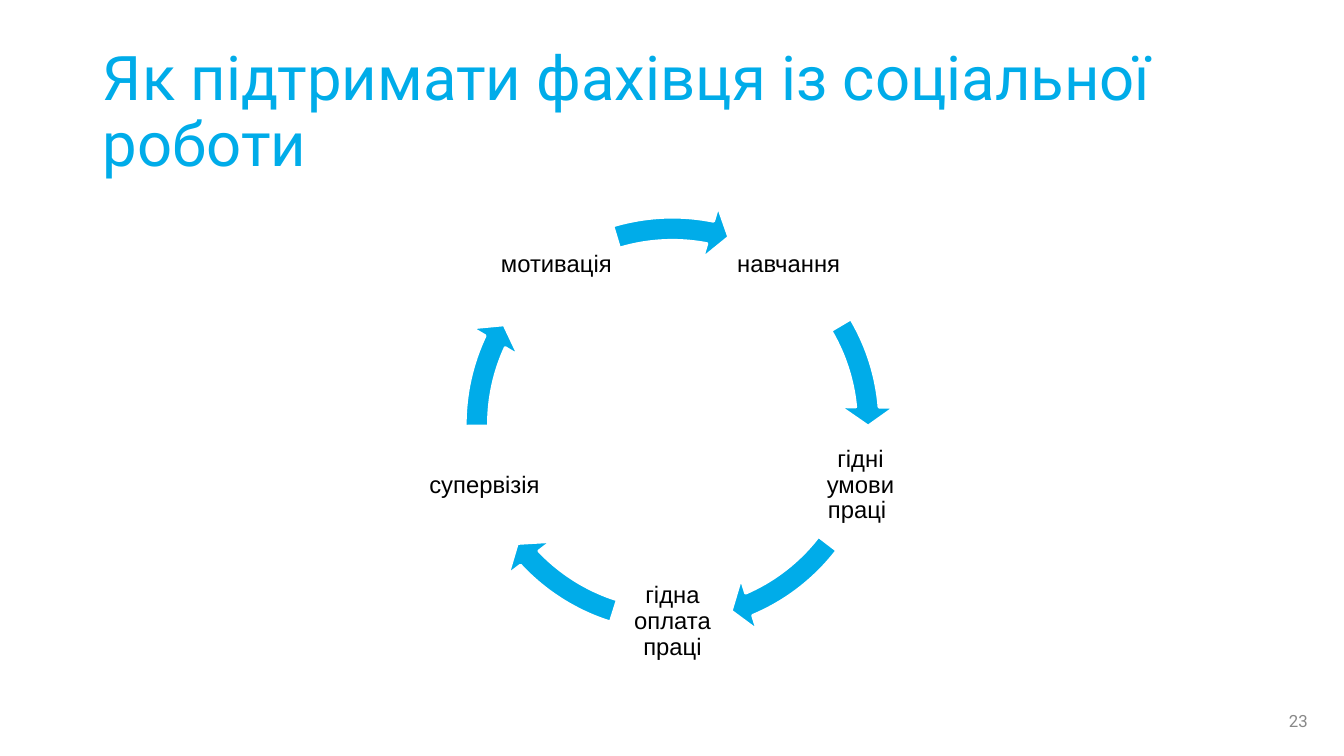
import math

import pptx
import pptx.dml.color
import pptx.enum.shapes
import pptx.enum.text
import pptx.util

Inches = pptx.util.Inches
Align = pptx.enum.text.PP_ALIGN
COLORS = {"accent": "00ACE9", "text": "000000", "number": "888888", "outline": "FFFFFF"}

# Cycle geometry in inches
CENTER_X, CENTER_Y = 6.67, 4.21
LABEL_RADIUS, LABEL_SIZE = 1.96, 1.18
RING_SIZE = 4.42

# Each label with the start and end angle of one arrow, in degrees
STEPS = [
    ("навчання", 329.41, 354.92),
    ("гідні умови праці ", 37.52, 66.95),
    ("гідна оплата праці", 107.46, 136.89),
    ("супервізія", 179.49, 205.0),
    ("мотивація", 253.28, 281.13),
]


def color(name):
    return pptx.dml.color.RGBColor.from_string(COLORS[name])


class CycleSlide:
    def __init__(self, deck):
        self.page = deck.slides.add_slide(deck.slide_layouts[5])

    def fill_text(self, box, text, size, font, tint, align, spacing=1.0, inset=(0.1, 0.05)):
        frame = box.text_frame
        side, edge = (Inches(value) for value in inset)
        frame_format = {
            "word_wrap": True,
            "auto_size": pptx.enum.text.MSO_AUTO_SIZE.NONE,
            "vertical_anchor": pptx.enum.text.MSO_ANCHOR.MIDDLE,
            "margin_left": side, "margin_right": side,
            "margin_top": edge, "margin_bottom": edge,
        }
        for name, value in frame_format.items():
            setattr(frame, name, value)
        para = frame.paragraphs[0]
        for name, value in {"alignment": align, "line_spacing": spacing}.items():
            setattr(para, name, value)
        span = para.add_run()
        span.text = text
        for name, value in {"size": pptx.util.Pt(size), "name": font}.items():
            setattr(span.font, name, value)
        span.font.color.rgb = color(tint)

    def title(self, text, left, top, width, height):
        box = self.page.shapes.title
        place = {"left": left, "top": top, "width": width, "height": height}
        for name, value in place.items():
            setattr(box, name, Inches(value))
        self.fill_text(box, text, 44, "Roboto", "accent", Align.LEFT, 0.9)

    def text_box(self, left, top, width, height, *content, **style):
        place = map(Inches, (left, top, width, height))
        self.fill_text(self.page.shapes.add_textbox(*place), *content, **style)

    def label(self, text, angle):
        left = CENTER_X + LABEL_RADIUS * math.cos(angle) - LABEL_SIZE / 2
        top = CENTER_Y + LABEL_RADIUS * math.sin(angle) - LABEL_SIZE / 2
        self.text_box(left, top, LABEL_SIZE, LABEL_SIZE, text, 17, "Arial", "text",
                      Align.CENTER, spacing=0.9, inset=(0.02, 0.02))

    def arrow(self, start, end):
        arrow = self.page.shapes.add_shape(
            pptx.enum.shapes.MSO_SHAPE.CIRCULAR_ARROW,
            Inches(CENTER_X - RING_SIZE / 2), Inches(CENTER_Y - RING_SIZE / 2),
            Inches(RING_SIZE), Inches(RING_SIZE))
        # One degree is 0.6 adjustment units
        values = (0.052, 5.59 * 0.6, end * 0.6, start * 0.6, 0.061)
        for index, value in enumerate(values):
            arrow.adjustments[index] = value
        arrow.shadow.inherit = False
        arrow.fill.solid()
        arrow.fill.fore_color.rgb = color("accent")
        arrow.line.color.rgb = color("outline")
        arrow.line.width = pptx.util.Pt(2)


def main():
    deck = pptx.Presentation()
    deck.slide_width = Inches(13.33)
    deck.slide_height = Inches(7.5)
    slide = CycleSlide(deck)

    # Title
    slide.title("Як підтримати фахівця із соціальної роботи", 0.92, 0.4, 11.5, 1.45)

    # Five labels clockwise from the upper right, each with an arrow
    for index, (text, start, end) in enumerate(STEPS):
        slide.label(text, math.radians(-54 + 72 * index))
        slide.arrow(start, end)

    # Slide number
    slide.text_box(10.07, 6.95, 3, 0.4, "23", 12, "Roboto", "number", Align.RIGHT)

    deck.save("out.pptx")


if __name__ == "__main__":
    main()
